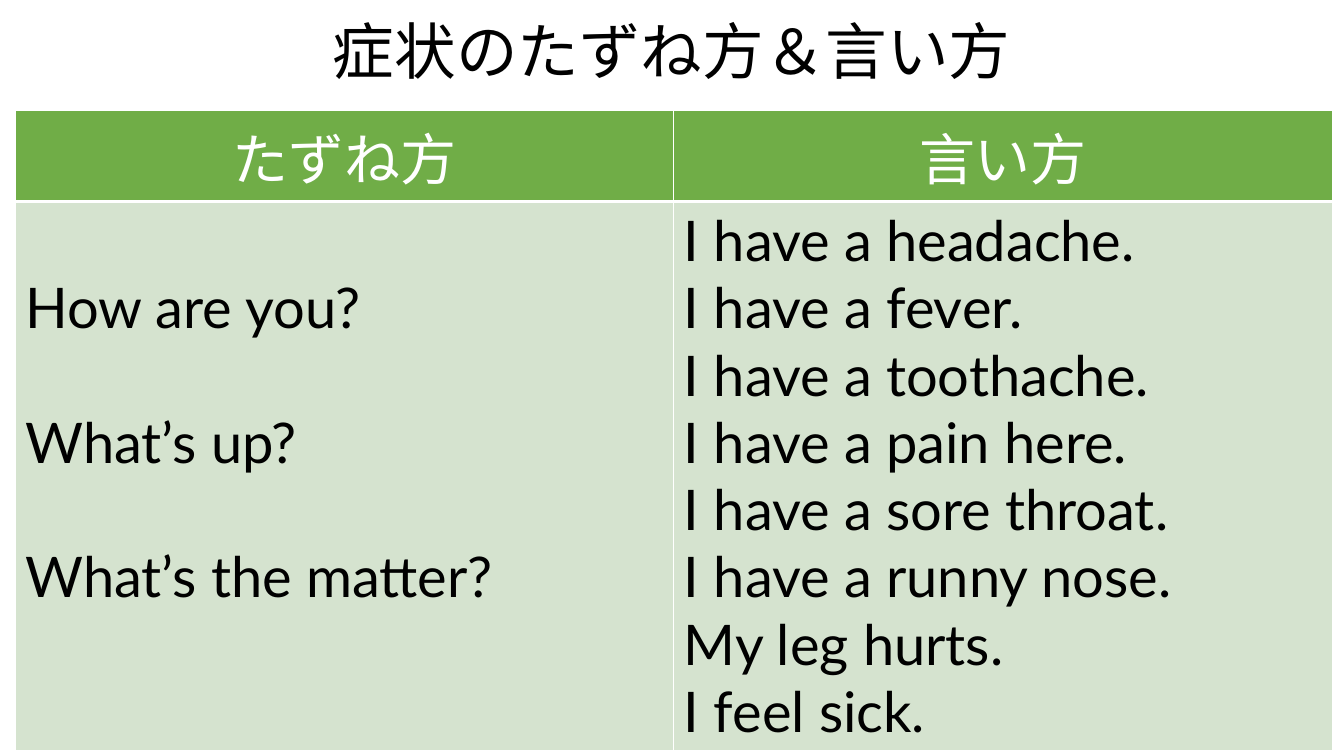
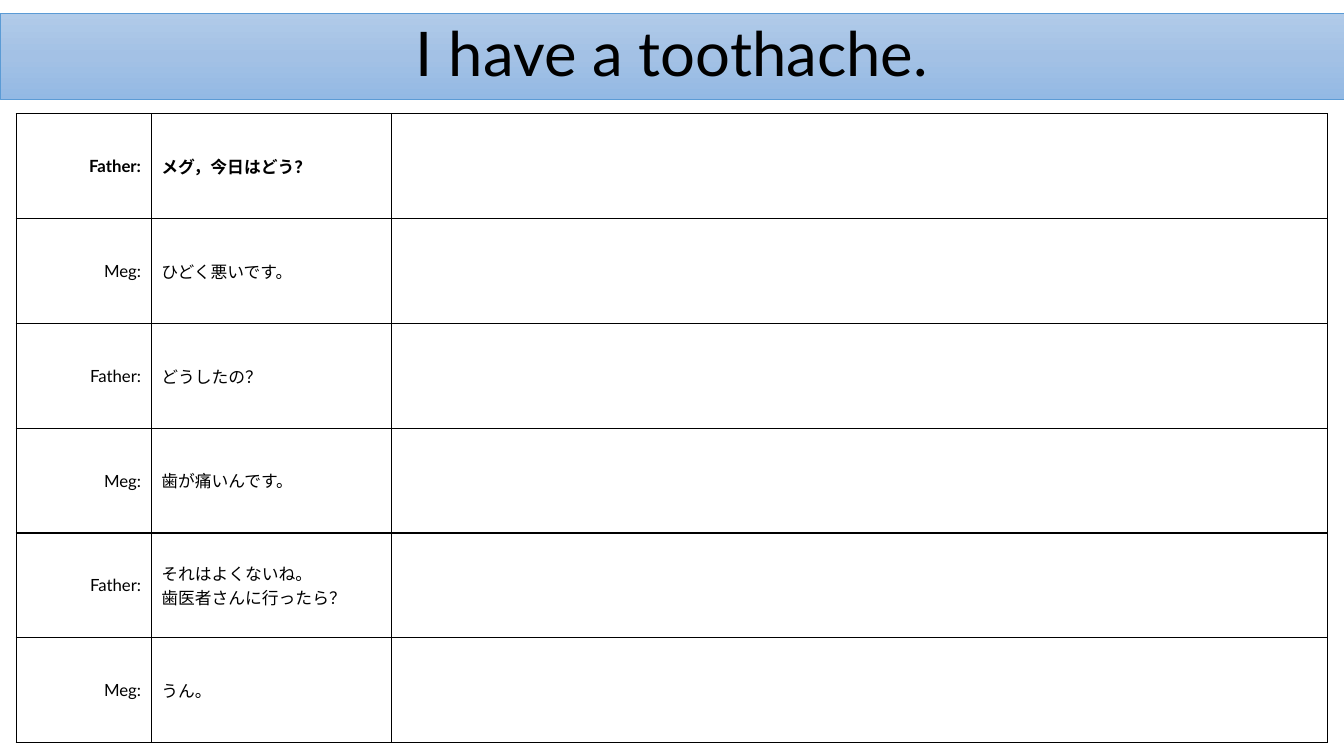
from copy import deepcopy

from lxml import etree
from pptx import Presentation
from pptx.dml.color import RGBColor
from pptx.enum.text import MSO_ANCHOR, MSO_AUTO_SIZE, PP_ALIGN
from pptx.oxml.ns import qn
from pptx.util import Cm, Pt

LEFT, MID, RIGHT = PP_ALIGN.LEFT, PP_ALIGN.CENTER, PP_ALIGN.RIGHT
TOP, HALF = MSO_ANCHOR.TOP, MSO_ANCHOR.MIDDLE
FIXED = MSO_AUTO_SIZE.NONE

HUES = {
    "ink": "000000", "paper": "FFFFFF", "head": "70AD47", "body": "D5E3CF",
    "edge": "5B9BD5", "high": "B1CBE9", "mid": "A3C1E5", "low": "93B9E4",
}
LATIN, KANA = "Lato", "Noto Sans CJK JP"
WIDE, TALL = 33.87, 19.05


def rgb(hue):
    return RGBColor.from_string(HUES[hue])


class Deck:
    """Holds the shared style and the current slide."""

    def __init__(self):
        self.file = Presentation()
        self.file.slide_width, self.file.slide_height = Cm(WIDE), Cm(TALL)
        self.slide = None

    def page(self):
        self.slide = self.file.slides.add_slide(self.file.slide_layouts[5])

    def text(self, frame, lines, font, size, hue="ink", align=LEFT,
             gap=1.0, bold=False):
        """Fill a text frame, one paragraph and run per line."""
        for i, line in enumerate(lines):
            para = frame.add_paragraph() if i else frame.paragraphs[0]
            para.alignment, para.line_spacing = align, gap
            run = para.add_run()
            run.text = line
            face = run.font
            face.name, face.size, face.bold = font, Pt(size), bold
            face.color.rgb = rgb(hue)
            east = etree.Element(qn("a:ea"), typeface=font)
            run._r.rPr.find(qn("a:latin")).addnext(east)

    def title(self, words, font, top, high):
        shape = self.slide.shapes.title
        shape.left, shape.top = Cm(0), Cm(top)
        shape.width, shape.height = Cm(WIDE), Cm(high)
        frame = shape.text_frame
        frame.word_wrap, frame.auto_size = True, FIXED
        frame.vertical_anchor = HALF
        self.text(frame, [words], font, 44, align=MID, gap=0.9)
        return shape

    def band(self, shape):
        """Give a title a three-stop blue gradient and a thin edge."""
        fill = shape.fill
        fill.gradient()
        fill.gradient_angle = 270
        first = shape._element.spPr.find(".//" + qn("a:gs"))
        first.addnext(deepcopy(first))
        for stop, hue, pos in zip(fill.gradient_stops,
                                  ("high", "mid", "low"), (0, 0.5, 1)):
            stop.color.rgb, stop.position = rgb(hue), pos
        shape.line.color.rgb, shape.line.width = rgb("edge"), Pt(0.5)

    def table(self, left, top, cols, rows):
        frame = self.slide.shapes.add_table(
            len(rows), len(cols), Cm(left), Cm(top),
            Cm(sum(cols)), Cm(sum(rows)))
        grid = frame.table
        grid.first_row = grid.horz_banding = False
        for col, wide in zip(grid.columns, cols):
            col.width = Cm(wide)
        for row, high in zip(grid.rows, rows):
            row.height = Cm(high)
        return grid

    def cell(self, cell, lines, font, size, fill=None, rule="ink",
             roof=1, base=1, anchor=HALF, **style):
        """Fill and border a cell; roof and base are rule widths."""
        cell.vertical_anchor = anchor
        if fill:
            cell.fill.solid()
            cell.fill.fore_color.rgb = rgb(fill)
        else:
            cell.fill.background()
        props = cell._tc.get_or_add_tcPr()
        sides = {"lnL": 1, "lnR": 1, "lnT": roof, "lnB": base}
        for i, (side, wide) in enumerate(sides.items()):
            line = etree.Element(qn("a:" + side), w=str(int(Pt(wide))))
            paint = etree.SubElement(line, qn("a:solidFill"))
            etree.SubElement(paint, qn("a:srgbClr"), val=HUES[rule])
            props.insert(i, line)
        self.text(cell.text_frame, lines, font, size, **style)


def phrases(deck):
    deck.page()
    deck.title("症状のたずね方＆言い方", KANA, 0, 2.77)
    grid = deck.table(0.39, 2.78, [16.59] * 2, [2.27, 13.84])

    # Header row
    for i, head in enumerate(("たずね方", "言い方")):
        deck.cell(grid.cell(0, i), [head], KANA, 40, fill="head",
                  rule="paper", base=3, hue="paper", align=MID)

    # Questions are set at double the pitch of the answers
    asks = ["How are you?", "What’s up?", "What’s the matter?"]
    says = ["I have a headache.", "I have a fever.", "I have a toothache.",
            "I have a pain here.", "I have a sore throat.",
            "I have a runny nose.", "My leg hurts.", "I feel sick."]
    for i, (lines, gap) in enumerate(((asks, 2.0), (says, 1.0))):
        deck.cell(grid.cell(1, i), lines, LATIN, 40, fill="body",
                  rule="paper", roof=3, anchor=TOP, gap=gap)


def dialog(deck):
    deck.page()
    deck.band(deck.title("I have a toothache.", LATIN, 0.33, 2.18))

    # Speaker, Japanese line, and room for the answer
    lines = [["メグ，今日はどう？"], ["ひどく悪いです。"], ["どうしたの？"],
             ["歯が痛いんです。"],
             ["それはよくないね。", "歯医者さんに行ったら？"], ["うん。"]]
    grid = deck.table(0.41, 2.87, [3.4, 6.05, 23.6], [2.64] * len(lines))
    for i, line in enumerate(lines):
        name = "Meg:" if i % 2 else "Father:"
        bold = i == 0
        deck.cell(grid.cell(i, 0), [name], LATIN, 12, align=RIGHT, bold=bold)
        deck.cell(grid.cell(i, 1), line, KANA, 12, bold=bold)
        deck.cell(grid.cell(i, 2), [], LATIN, 12)


def main():
    deck = Deck()
    phrases(deck)
    dialog(deck)
    deck.file.save("out.pptx")


if __name__ == "__main__":
    main()
